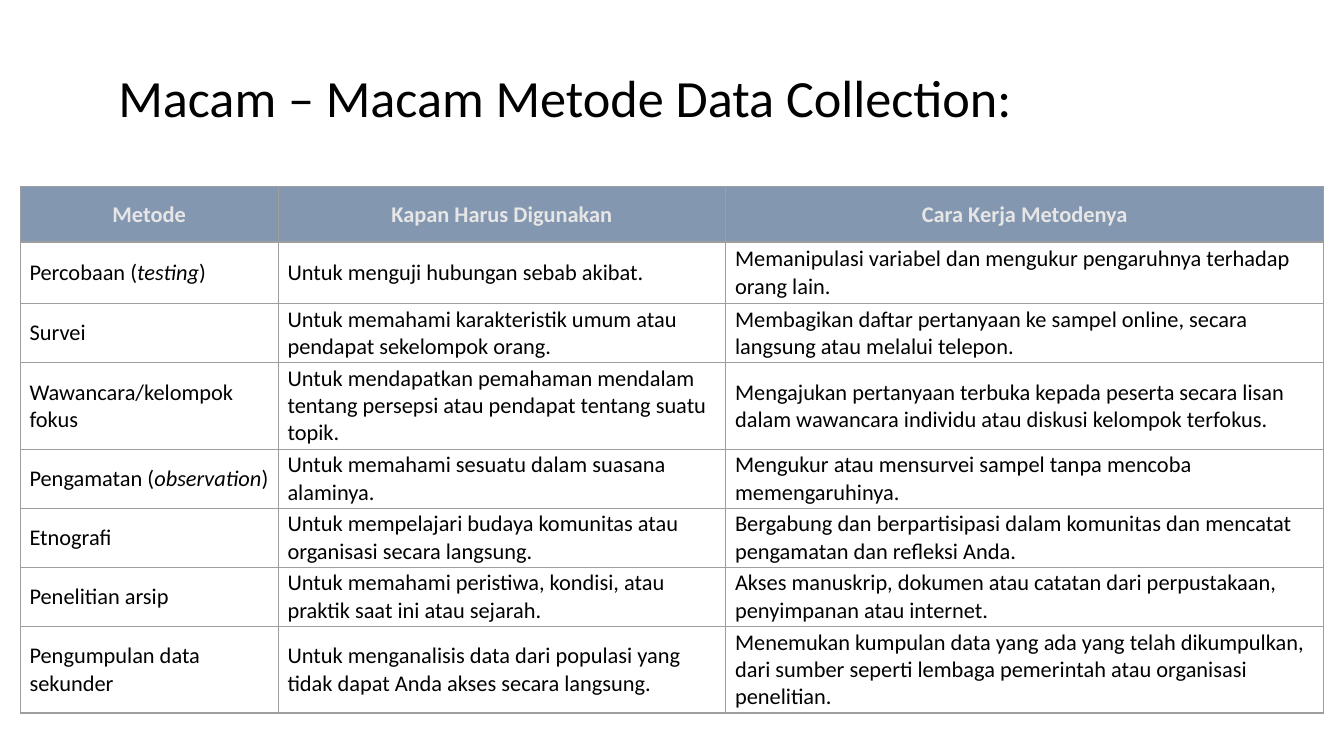
from lxml import etree
from pptx import Presentation
from pptx.dml.color import RGBColor
from pptx.enum import text as txt
from pptx.oxml import ns
from pptx.util import Inches, Pt

BLACK = RGBColor(0x00, 0x00, 0x00)
WHITE = RGBColor(0xFF, 0xFF, 0xFF)
PALE = RGBColor(0xE7, 0xE6, 0xE6)
SLATE = RGBColor(0x84, 0x97, 0xB0)
GREY = RGBColor(0x9E, 0x9E, 0x9E)
FONT = "Calibri"

TITLE = "Macam – Macam Metode Data Collection:"
# Words between asterisks are italic.
ROWS = [
    ("Metode", "Kapan Harus Digunakan", "Cara Kerja Metodenya"),
    ("Percobaan (*testing*)",
     "Untuk menguji hubungan sebab akibat.",
     "Memanipulasi variabel dan mengukur pengaruhnya terhadap orang lain."),
    ("Survei",
     "Untuk memahami karakteristik umum atau pendapat sekelompok orang.",
     "Membagikan daftar pertanyaan ke sampel online, secara langsung atau "
     "melalui telepon."),
    ("Wawancara/kelompok fokus",
     "Untuk mendapatkan pemahaman mendalam tentang persepsi atau pendapat "
     "tentang suatu topik.",
     "Mengajukan pertanyaan terbuka kepada peserta secara lisan dalam "
     "wawancara individu atau diskusi kelompok terfokus."),
    ("Pengamatan (*observation*)",
     "Untuk memahami sesuatu dalam suasana alaminya.",
     "Mengukur atau mensurvei sampel tanpa mencoba memengaruhinya."),
    ("Etnografi",
     "Untuk mempelajari budaya komunitas atau organisasi secara langsung.",
     "Bergabung dan berpartisipasi dalam komunitas dan mencatat pengamatan "
     "dan refleksi Anda."),
    ("Penelitian arsip",
     "Untuk memahami peristiwa, kondisi, atau praktik saat ini atau sejarah.",
     "Akses manuskrip, dokumen atau catatan dari perpustakaan, penyimpanan "
     "atau internet."),
    ("Pengumpulan data sekunder",
     "Untuk menganalisis data dari populasi yang tidak dapat Anda akses "
     "secara langsung.",
     "Menemukan kumpulan data yang ada yang telah dikumpulkan, dari sumber "
     "seperti lembaga pemerintah atau organisasi penelitian."),
]
WIDTHS = (1.92, 3.33, 4.45)
HEIGHTS = [0.41, 0.46] + [0.41] * (len(ROWS) - 2)


def style(font, size, color, bold=False, italic=False):
    font.name, font.size, font.bold, font.italic = FONT, Pt(size), bold, italic
    font.color.rgb = color


def add_title(slide, left, top, width, height):
    title = slide.shapes.title
    title.left, title.top = Inches(left), Inches(top)
    title.width, title.height = Inches(width), Inches(height)
    frame = title.text_frame
    frame.text = TITLE
    frame.auto_size = txt.MSO_AUTO_SIZE.NONE
    frame.vertical_anchor = txt.MSO_ANCHOR.MIDDLE
    frame.margin_left = frame.margin_right = Inches(0.1)
    frame.margin_top = frame.margin_bottom = Inches(0.1)
    par = frame.paragraphs[0]
    par.alignment = txt.PP_ALIGN.LEFT
    par.line_spacing = 0.9
    style(par.runs[0].font, 28, BLACK)


def add_borders(cell):
    """Draw a thin grey line on all four sides; lines must precede the fill."""
    props = cell._tc.get_or_add_tcPr()
    for place, side in enumerate(("lnL", "lnR", "lnT", "lnB")):
        line = etree.Element(ns.qn(f"a:{side}"), w=str(Pt(0.75)))
        fill = etree.SubElement(line, ns.qn("a:solidFill"))
        etree.SubElement(fill, ns.qn("a:srgbClr"), val=str(GREY))
        props.insert(place, line)


def fill_cell(cell, words, head):
    cell.vertical_anchor = txt.MSO_ANCHOR.MIDDLE
    cell.margin_left = cell.margin_right = Inches(0.07)
    cell.margin_top = cell.margin_bottom = Pt(1.2)
    if head:
        cell.fill.solid()
        cell.fill.fore_color.rgb = SLATE
    else:
        cell.fill.background()
    par = cell.text_frame.paragraphs[0]
    par.alignment = txt.PP_ALIGN.CENTER if head else txt.PP_ALIGN.LEFT
    for i, part in enumerate(words.split("*")):
        run = par.add_run()
        run.text = part
        style(run.font, 12, PALE if head else BLACK, head, i % 2 == 1)
    add_borders(cell)


def add_methods(slide, left, top):
    frame = slide.shapes.add_table(
        len(ROWS), len(WIDTHS), Inches(left), Inches(top),
        Inches(sum(WIDTHS)), Inches(sum(HEIGHTS)))
    table = frame.table
    table.first_row = True
    table.horz_banding = False
    for col, width in zip(table.columns, WIDTHS):
        col.width = Inches(width)
    for r, (row, height) in enumerate(zip(table.rows, HEIGHTS)):
        row.height = Inches(height)
        for cell, words in zip(row.cells, ROWS[r]):
            fill_cell(cell, words, r == 0)


def main():
    deck = Presentation()
    deck.slide_width = Inches(10)
    deck.slide_height = deck.slide_width * 9 // 16
    slide = deck.slides.add_slide(deck.slide_layouts[5])
    slide.background.fill.solid()
    slide.background.fill.fore_color.rgb = WHITE
    add_title(slide, 0.78, 0.43, 8.43, 0.64)
    add_methods(slide, 0.15, 1.39)
    deck.save("out.pptx")


if __name__ == "__main__":
    main()
